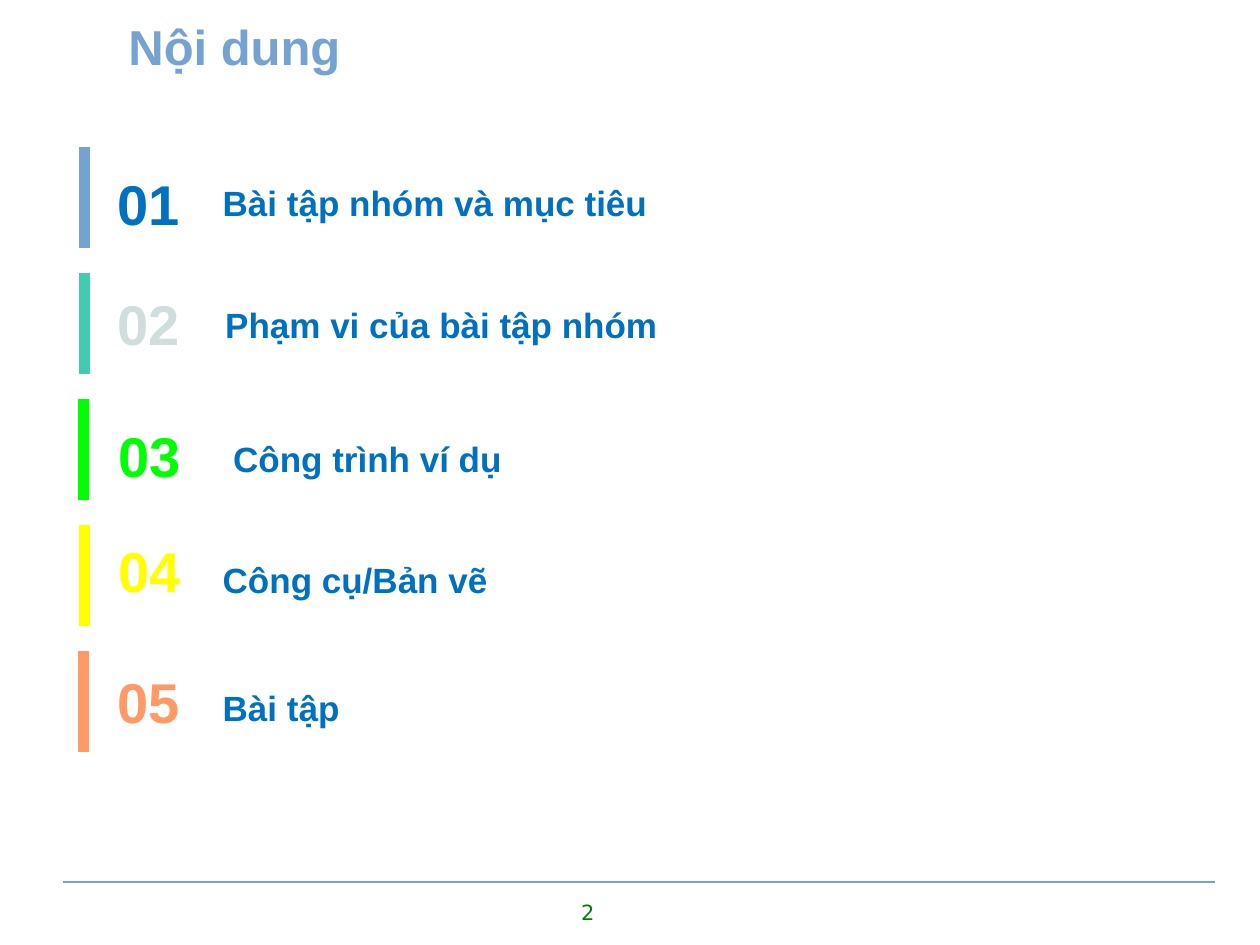
from pptx import Presentation
from pptx import util as u
from pptx.dml.color import RGBColor
from pptx.enum import shapes, text
from pptx.oxml import parse_xml
from pptx.oxml.ns import nsdecls

COLOURS = {
    "sky": "75A3D1", "teal": "41CBB1", "lime": "00FF00", "yellow": "FFFF00",
    "coral": "FF9966", "blue": "0070C0", "mist": "D0DDDD", "green": "008000",
}
FORMATS = {
    "title": {"name": "Arial", "size": u.Pt(28), "bold": True},
    "number": {"name": "Arial", "size": u.Pt(32), "bold": True},
    "topic": {"name": "Arial", "size": u.Pt(20), "bold": True},
    "page": {"name": "DejaVu Sans", "size": u.Pt(12), "bold": False},
}
ALIGN = text.PP_ALIGN


class Agenda:
    """Holds the style and the current slide; lengths are in centimetres."""

    def __init__(self, slide):
        self.slide = slide

    def line(self, x1, y1, x2, y2, colour, width):
        rule = self.slide.shapes.add_connector(
            shapes.MSO_CONNECTOR.STRAIGHT, *map(u.Cm, (x1, y1, x2, y2)))
        rule.line.color.rgb = RGBColor.from_string(COLOURS[colour])
        rule.line.width = u.Pt(width)
        rule._element.spPr.append(parse_xml(f"<a:effectLst {nsdecls('a')}/>"))

    def text(self, box, lines, style, colour, align=ALIGN.LEFT, gap=0):
        frame = self.slide.shapes.add_textbox(*map(u.Cm, box)).text_frame
        frame.word_wrap = True
        for index, words in enumerate(lines):
            paragraph = frame.add_paragraph() if index else frame.paragraphs[0]
            paragraph.alignment = align
            if index:
                paragraph.space_before = u.Pt(gap)
            run = paragraph.add_run()
            run.text = words
            for key, value in FORMATS[style].items():
                setattr(run.font, key, value)
            run.font.color.rgb = RGBColor.from_string(COLOURS[colour])


def main():
    deck = Presentation()
    deck.slide_width, deck.slide_height = u.Cm(25.4), u.Cm(19.05)
    agenda = Agenda(deck.slides.add_slide(deck.slide_layouts[6]))

    # Footer rule and page number
    agenda.line(1.27, 17.78, 24.49, 17.78, "sky", 1.5)
    agenda.text((8.89, 18.01, 5.92, 0.89), ["2"], "page", "green", ALIGN.CENTER)

    # Title
    agenda.text((2.34, 0.2, 17.98, 1.45), ["Nội dung"], "title", "sky")

    # Section bars and numbers: bar x, bar colour, number x, number y, number colour
    sections = [
        (1.7, "sky", 2.11, 3.3, "blue"),
        (1.7, "teal", 2.11, 5.72, "mist"),
        (1.68, "lime", 2.13, 8.38, "lime"),
        (1.7, "yellow", 2.13, 10.69, "yellow"),
        (1.68, "coral", 2.11, 13.34, "coral"),
    ]
    for index, (bar_x, bar, number_x, number_y, number) in enumerate(sections):
        bar_top = 2.97 + 2.54 * index
        agenda.line(bar_x, bar_top, bar_x, bar_top + 2.03, bar, 6)
        agenda.text((number_x, number_y, 2.74, 1.63), [f"{index + 1:02}"],
                    "number", number)

    # Section topics; the last two share one box
    topics = [
        ((4.24, 3.53, 15.67, 1.07), ["Bài tập nhóm và mục tiêu"]),
        ((4.29, 5.99, 15.67, 1.07), ["Phạm vi của bài tập nhóm"]),
        ((4.45, 8.69, 19.69, 1.07), ["Công trình ví dụ"]),
        ((4.24, 11.13, 18.8, 4.52), ["Công cụ/Bản vẽ", "Bài tập"]),
    ]
    for box, lines in topics:
        agenda.text(box, lines, "topic", "blue", ALIGN.JUSTIFY, gap=49)

    deck.save("out.pptx")


if __name__ == "__main__":
    main()
